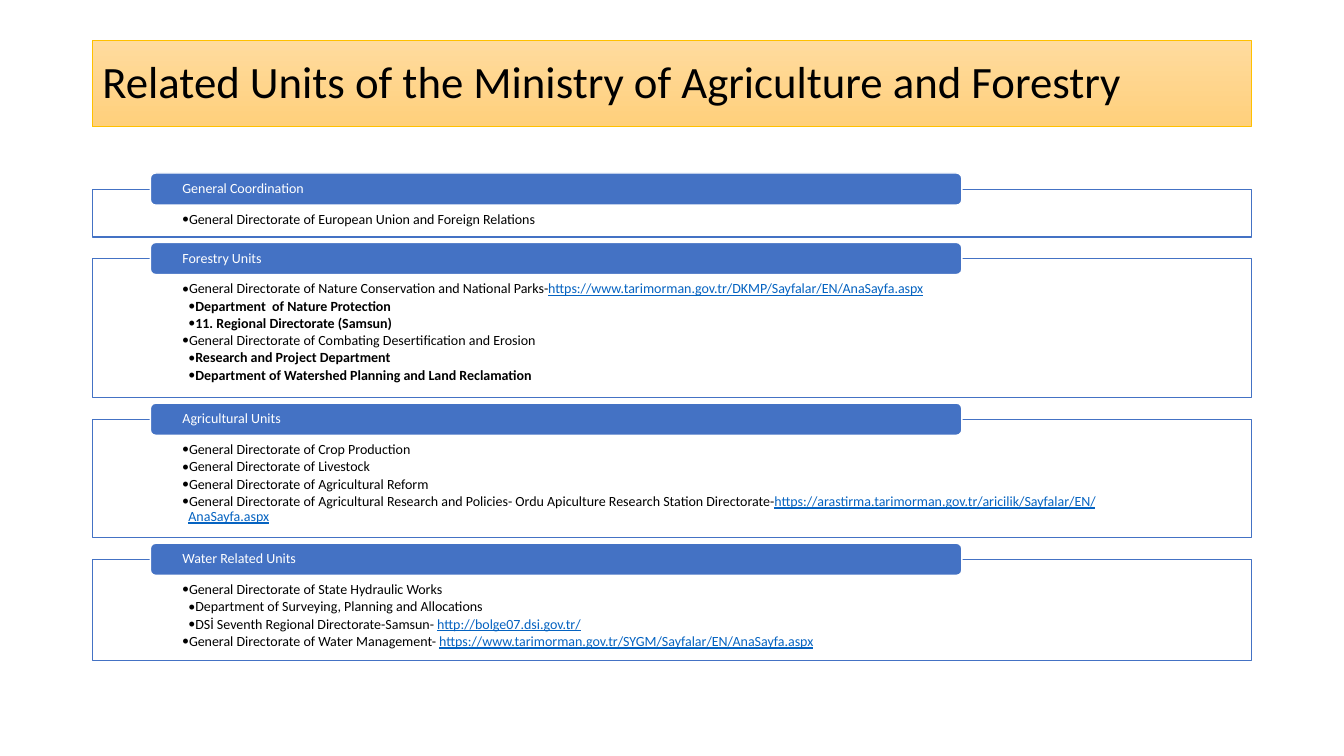
from pptx import Presentation
from pptx import util as u
from pptx.dml.color import RGBColor
from pptx.enum import shapes, text
from pptx.oxml.ns import qn
from lxml import etree

HUES = {
    "blue": "4472C4", "link": "0563C1", "gold": "FFC000",
    "light": "FFDB9E", "deep": "FFD07C", "white": "FFFFFF", "black": "000000",
}
FONT = "Calibri"
LEFT, WIDTH = 2.33, 29.21
TOP, GAP = 4.77, 0.55
TAB_LEFT, TAB_WIDTH, TAB_HIGH, TAB_RISE = 3.79, 20.45, 0.81, 0.41
BULLET = 0.16

# Heading, box height, then lines as (level, text, link)
UNITS = [
    ("General Coordination", 1.2, [
        (1, "General Directorate of European Union and Foreign Relations", ""),
    ]),
    ("Forestry Units", 3.5, [
        (1, "General Directorate of Nature Conservation and National Parks-",
         "https://www.tarimorman.gov.tr/DKMP/Sayfalar/EN/AnaSayfa.aspx"),
        (2, "Department  of Nature Protection", ""),
        (2, "11. Regional Directorate (Samsun)", ""),
        (1, "General Directorate of Combating Desertification and Erosion", ""),
        (2, "Research and Project Department", ""),
        (2, "Department of Watershed Planning and Land Reclamation", ""),
    ]),
    ("Agricultural Units", 2.98, [
        (1, "General Directorate of Crop Production", ""),
        (1, "General Directorate of Livestock", ""),
        (1, "General Directorate of Agricultural Reform", ""),
        (1, "General Directorate of Agricultural Research and Policies- "
            "Ordu Apiculture Research Station Directorate-",
         "https://arastirma.tarimorman.gov.tr/aricilik/Sayfalar/EN/AnaSayfa.aspx"),
    ]),
    ("Water Related Units", 2.54, [
        (1, "General Directorate of State Hydraulic Works", ""),
        (2, "Department of Surveying, Planning and Allocations", ""),
        (2, "DSİ Seventh Regional Directorate-Samsun- ",
         "http://bolge07.dsi.gov.tr/"),
        (1, "General Directorate of Water Management- ",
         "https://www.tarimorman.gov.tr/SYGM/Sayfalar/EN/AnaSayfa.aspx"),
    ]),
]
BOLD_UNIT = "Forestry Units"  # its second-level lines are bold


def hue(name):
    return RGBColor.from_string(HUES[name])


def add_box(slide, kind, place, line, width, pads, anchor):
    box = slide.shapes.add_shape(kind, *[u.Cm(n) for n in place])
    box.shadow.inherit = False
    box.line.color.rgb = hue(line)
    box.line.width = u.Pt(width)
    frame = box.text_frame
    frame.word_wrap = True
    frame.vertical_anchor = anchor
    (frame.margin_left, frame.margin_top,
     frame.margin_right, frame.margin_bottom) = [u.Cm(n) for n in pads]
    return box


def fill_flat(box, name):
    box.fill.solid()
    box.fill.fore_color.rgb = hue(name)


def style_run(run, size, name, bold=None):
    font = run.font
    font.name, font.size, font.bold = FONT, u.Pt(size), bold
    font.color.rgb = hue(name)


def style_para(para, size, name, bold=None):
    para.alignment = text.PP_ALIGN.LEFT
    para.line_spacing = 0.9
    for run in para.runs:
        style_run(run, size, name, bold)


def add_bullet(para, level):
    props = para._p.get_or_add_pPr()
    props.set("marL", str(u.Cm(BULLET * level)))
    props.set("indent", str(-u.Cm(BULLET)))
    etree.SubElement(props, qn("a:buFont")).set("typeface", FONT)
    etree.SubElement(props, qn("a:buChar")).set("char", "•")


def add_title(slide):
    box = add_box(slide, shapes.MSO_SHAPE.RECTANGLE, (LEFT, 1.02, WIDTH, 2.17),
                  "gold", 0.5, (0.25, 0.13, 0.25, 0.13), text.MSO_ANCHOR.MIDDLE)
    box.fill.gradient()
    box.fill.gradient_angle = 270
    for stop, name in zip(box.fill.gradient_stops, ("light", "deep")):
        stop.color.rgb = hue(name)
    frame = box.text_frame
    frame.text = "Related Units of the Ministry of Agriculture and Forestry"
    style_para(frame.paragraphs[0], 32, "black")


def add_list(slide, top, high, lines, strong):
    box = add_box(slide, shapes.MSO_SHAPE.RECTANGLE, (LEFT, top, WIDTH, high),
                  "blue", 1, (2.26, 0.58, 2.26, 0.2), text.MSO_ANCHOR.TOP)
    fill_flat(box, "white")
    frame = box.text_frame
    frame.text = "\n".join(words for _, words, _ in lines)
    for para, (level, _, link) in zip(frame.paragraphs, lines):
        style_para(para, 10, "black", strong and level == 2)
        para.space_after = u.Pt(1.5)
        add_bullet(para, level)
        if link:
            run = para.add_run()
            run.text = link
            style_run(run, 10, "link")
            run.font.underline = True


def add_tab(slide, top, words):
    box = add_box(slide, shapes.MSO_SHAPE.ROUNDED_RECTANGLE,
                  (TAB_LEFT, top - TAB_RISE, TAB_WIDTH, TAB_HIGH),
                  "white", 1, (0.77, 0, 0.77, 0), text.MSO_ANCHOR.MIDDLE)
    fill_flat(box, "blue")
    box.text_frame.text = words
    style_para(box.text_frame.paragraphs[0], 10, "white")


def main():
    deck = Presentation()
    deck.slide_width, deck.slide_height = u.Cm(33.87), u.Cm(19.05)
    slide = deck.slides.add_slide(deck.slide_layouts[6])

    add_title(slide)

    # Unit groups, stacked with equal gaps
    top = TOP
    for head, high, lines in UNITS:
        add_list(slide, top, high, lines, head == BOLD_UNIT)
        add_tab(slide, top, head)
        top += high + GAP

    deck.save("out.pptx")


if __name__ == "__main__":
    main()
